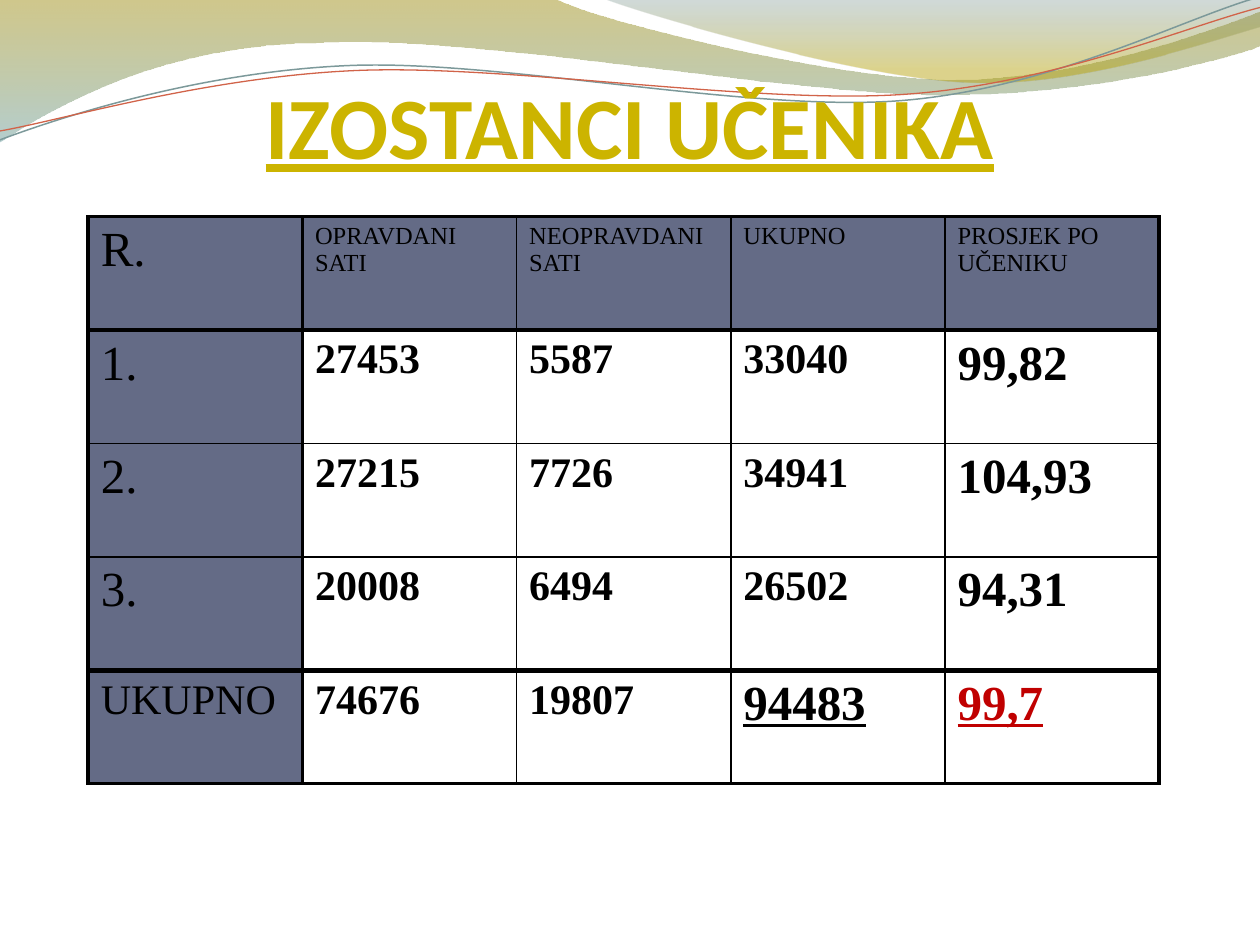
from dataclasses import dataclass
from math import cos, radians, sin

from lxml import etree
from pptx import Presentation
from pptx.dml.color import RGBColor
from pptx.enum import text as txt
from pptx.oxml import ns
from pptx.util import Inches, Pt


@dataclass(frozen=True)
class Theme:
    title: str = "CCB400"
    ink: str = "000000"
    head: str = "646B86"
    alert: str = "C00000"
    olive: str = "978500"
    teal: str = "77A5A6"
    slate: str = "648484"
    gold: str = "B49F00"
    mist: str = "7C999A"
    coral: str = "D16349"
    sans: str = "Calibri"
    serif: str = "Times New Roman"
    huge: int = 50
    large: int = 28
    mid: int = 24
    small: int = 14


T = Theme()
TILT = 357.3

# A list of one point is a corner; a list of three is a curve: two control
# points and an end point. All are in inches.
BAND = [[(0, -0.01)], [(4.4, -0.01)],
        [(4.76, 0.17), (6.64, 0.63), (7.58, 0.63)],
        [(8.53, 0.63), (9.58, 0.26), (10, 0.09)],
        [(10.01, 0.36)],
        [(9.83, 0.44), (8.7, 0.76), (7.46, 0.75)],
        [(6.22, 0.75), (3.82, 0.28), (2.57, 0.34)],
        [(1.29, 0.35), (0.46, 0.83), (-0.01, 1.13)],
        [(0, -0.01)]]
CREST = [[(4.79, -0.01)],
         [(5.09, 0.11), (6.82, 0.62), (7.69, 0.65)],
         [(8.56, 0.69), (9.61, 0.32), (10, 0.21)],
         [(10, 0)], [(4.79, -0.01)]]
UPPER = [[(0, 1.11)],
         [(0.48, 0.93), (1.58, 0.57), (2.77, 0.52)],
         [(3.95, 0.47), (5.93, 0.89), (7.13, 0.8)],
         [(8.33, 0.71), (9.38, 0.15), (9.98, -0.02)]]
LOWER = [[(0, 1.04)],
         [(0.47, 0.96), (1.64, 0.61), (2.83, 0.56)],
         [(4.03, 0.51), (5.97, 0.83), (7.17, 0.75)],
         [(8.36, 0.67), (9.41, 0.21), (10, 0.06)]]

ROWS = [["R.", "OPRAVDANI SATI", "NEOPRAVDANI SATI", "UKUPNO",
         "PROSJEK PO UČENIKU"],
        ["1.", "27453", "5587", "33040", "99,82"],
        ["2.", "27215", "7726", "34941", "104,93"],
        ["3.", "20008", "6494", "26502", "94,31"],
        ["UKUPNO", "74676", "19807", "94483", "99,7"]]
ACROSS = [2.25, 2.25, 1, 1, 3, 2.25]
DOWN = [2.25, 2.25, 1, 1, 1, 2.25]


def rgb(color):
    return RGBColor.from_string(color)


def write(frame, words, size, font=T.serif, color=T.ink, bold=False,
          under=False, align=txt.PP_ALIGN.LEFT):
    frame.word_wrap = True
    para = frame.paragraphs[0]
    para.alignment = align
    run = para.add_run()
    run.text = words
    face = run.font
    face.name, face.size = font, Pt(size)
    face.bold, face.underline = bold, under
    face.color.rgb = rgb(color)


def turn(parts, mid, angle):
    """Rotate all points clockwise about mid."""
    c, s = cos(radians(angle)), sin(radians(angle))
    x0, y0 = mid
    return [[(x0 + (x - x0) * c - (y - y0) * s,
              y0 + (x - x0) * s + (y - y0) * c) for x, y in part]
            for part in parts]


def outline(slide, box, parts, close):
    """Draw straight segments, then join each group of three into a curve."""
    left, top = box
    pts = [(left + Inches(x), top + Inches(y))
           for part in parts for x, y in part]
    pen = slide.shapes.build_freeform(*pts[0])
    pen.add_line_segments(pts[1:], close=close)
    shape = pen.convert_to_shape()
    shape.shadow.inherit = False
    lines = iter(list(shape.element.iter(ns.qn("a:lnTo"))))
    for part in parts[1:]:
        group = [next(lines) for _ in part]
        if len(group) == 3:
            curve = etree.Element(ns.qn("a:cubicBezTo"))
            group[0].addprevious(curve)
            for line in group:
                curve.append(line[0])
                line.getparent().remove(line)
    return shape


def fade(slide, box, parts, stops):
    """Draw a closed outline with a see-through fill from top to bottom."""
    shape = outline(slide, box, parts, True)
    shape.line.fill.background()
    fill = shape.fill
    fill.gradient()
    fill.gradient_angle = 270
    for stop, (place, color, alpha) in zip(fill.gradient_stops, stops):
        stop.position = place
        stop.color.rgb = rgb(color)
    tones = shape.element.spPr.iter(ns.qn("a:srgbClr"))
    for tone, (place, color, alpha) in zip(tones, stops):
        etree.SubElement(tone, ns.qn("a:alpha"), val=str(alpha * 1000))


def waves(slide, box):
    fade(slide, box, BAND, [(0, T.olive, 45), (1, T.teal, 55)])
    fade(slide, box, CREST, [(0, T.slate, 30), (0.8, T.gold, 45)])
    for parts, mid, color, width in ((UPPER, (4.99, 0.58), T.mist, 0.85),
                                     (LOWER, (5, 0.59), T.coral, 0.75)):
        shape = outline(slide, box, turn(parts, mid, 360 - TILT), False)
        shape.rotation = TILT
        shape.fill.background()
        shape.line.color.rgb = rgb(color)
        shape.line.width = Pt(width)


def title(slide, box):
    frame = slide.shapes.add_textbox(*box).text_frame
    frame.margin_left = frame.margin_right = frame.margin_bottom = 0
    frame.margin_top = Inches(0.05)
    frame.vertical_anchor = txt.MSO_ANCHOR.MIDDLE
    write(frame, "IZOSTANCI UČENIKA", T.huge, font=T.sans, color=T.title,
          bold=True, under=True, align=txt.PP_ALIGN.CENTER)


def edge(cell, widths):
    """Set the left, right, top and bottom borders, in points."""
    props = cell._tc.get_or_add_tcPr()
    for i, (side, width) in enumerate(zip("LRTB", widths)):
        line = etree.Element(ns.qn(f"a:ln{side}"), w=str(Pt(width)))
        fill = etree.SubElement(line, ns.qn("a:solidFill"))
        etree.SubElement(fill, ns.qn("a:srgbClr"), val=T.ink)
        props.insert(i, line)


def style(r, c):
    """Choose the text format of a cell from its row and column."""
    last = len(ROWS) - 1
    if c == 0:
        return dict(size=T.mid if r == last else T.large)
    if r == 0:
        return dict(size=T.small)
    total = r == last and c >= 3
    return dict(size=T.large if total or c == 4 else T.mid, bold=True,
                under=total, color=T.alert if total and c == 4 else T.ink)


def table(slide, box):
    left, top, width, height = box
    grid = slide.shapes.add_table(len(ROWS), len(ROWS[0]), *box).table
    grid.first_row = grid.horz_banding = False
    for r, row in enumerate(ROWS):
        grid.rows[r].height = height // len(ROWS)
        for c, words in enumerate(row):
            cell = grid.cell(r, c)
            if r == 0 or c == 0:
                cell.fill.solid()
                cell.fill.fore_color.rgb = rgb(T.head)
            else:
                cell.fill.background()
            edge(cell, (DOWN[c], DOWN[c + 1], ACROSS[r], ACROSS[r + 1]))
            write(cell.text_frame, words, **style(r, c))


def main():
    deck = Presentation()
    deck.slide_width, deck.slide_height = Inches(10), Inches(7.5)
    slide = deck.slides.add_slide(deck.slide_layouts[6])
    waves(slide, (Inches(0), Inches(0)))
    title(slide, (Inches(0.75), Inches(0.42), Inches(8.5), Inches(1.08)))
    table(slide, (Inches(0.7), Inches(1.72), Inches(8.5), Inches(4.5)))
    deck.save("out.pptx")


if __name__ == "__main__":
    main()
